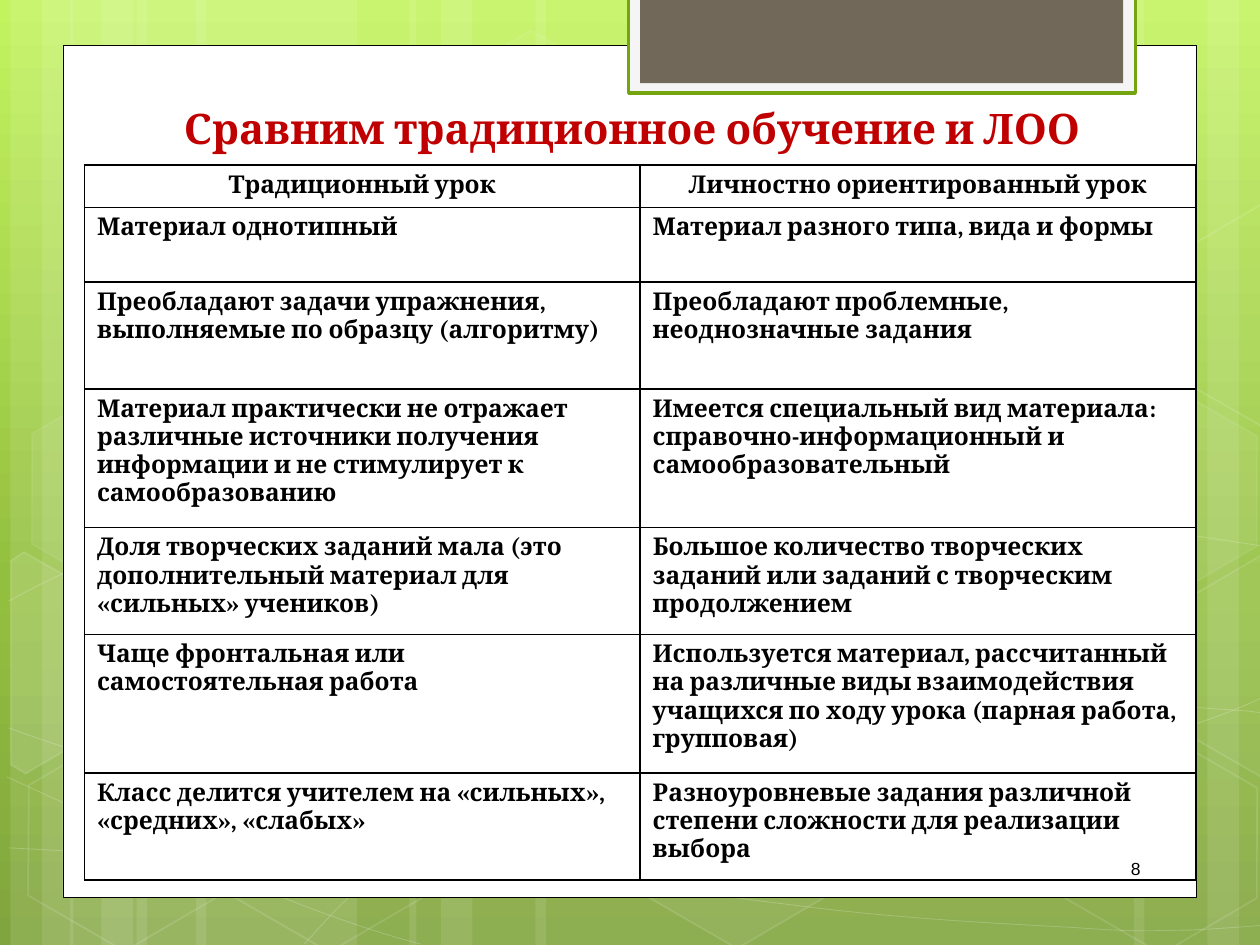
from copy import deepcopy
from dataclasses import dataclass
from math import cos, radians, sin

from lxml import etree
from pptx import Presentation
from pptx.dml.color import RGBColor
from pptx.enum.shapes import MSO_SHAPE
from pptx.enum.text import MSO_ANCHOR, MSO_AUTO_SIZE, PP_ALIGN
from pptx.oxml.ns import qn
from pptx.util import Pt

LEFT, CENTER, RIGHT = PP_ALIGN.LEFT, PP_ALIGN.CENTER, PP_ALIGN.RIGHT
BOTTOM, NO_FIT = MSO_ANCHOR.BOTTOM, MSO_AUTO_SIZE.NONE
RECTANGLE, HEXAGON = MSO_SHAPE.RECTANGLE, MSO_SHAPE.HEXAGON


@dataclass(frozen=True)
class Theme:
    white: str = "FFFFFF"
    ink: str = "000000"
    heading: str = "C00000"
    tab: str = "F5F5F5"
    tab_line: str = "74A510"
    tab_inside: str = "71685A"
    backdrop: tuple = ((0, "C3F35F"), (0.62, "93BF3F"), (1, "81A53E"))
    serif: str = "Cambria"
    sans: str = "Arial"
    heading_size: float = 24
    table_size: float = 14
    number_size: float = 10


def write(frame, text, *, font, size, color, bold=False, align=LEFT):
    paragraph = frame.paragraphs[0]
    paragraph.alignment = align
    run = paragraph.add_run()
    run.text = text
    run.font.name = font
    run.font.size = Pt(size)
    run.font.bold = bold
    run.font.color.rgb = RGBColor.from_string(color)


def paint(fill, color):
    if color is None:
        fill.background()
        return
    fill.solid()
    fill.fore_color.rgb = RGBColor.from_string(color)


def fade(shape, percent, part):
    for color in shape.element.spPr.findall(f"{part}{qn('a:solidFill')}/{qn('a:srgbClr')}"):
        etree.SubElement(color, qn("a:alpha"), val=str(percent * 1000))


def bend(shape):
    segments = shape.element.findall(f".//{qn('a:lnTo')}")
    for i in range(0, len(segments), 3):
        first, *others = segments[i:i + 3]
        curve = etree.Element(qn("a:cubicBezTo"))
        first.addprevious(curve)
        curve.extend([segment[0] for segment in (first, *others)])
        for segment in (first, *others):
            segment.getparent().remove(segment)


def turn(points, center, degrees):
    angle = radians(degrees)
    cx, cy = center
    return [(cx + (x - cx) * cos(angle) - (y - cy) * sin(angle),
             cy + (x - cx) * sin(angle) + (y - cy) * cos(angle)) for x, y in points]


class SlideBuilder:
    """Draws styled elements on the current slide, with lengths in points."""

    def __init__(self, slide, theme):
        self.slide, self.theme = slide, theme

    def background(self):
        fill = self.slide.background.fill
        fill.gradient()
        fill.gradient_angle = 270
        stops = self.slide.element.find(f".//{qn('a:gsLst')}")
        stops.append(deepcopy(stops[-1]))
        for stop, (position, color) in zip(fill.gradient_stops, self.theme.backdrop):
            stop.position = position
            stop.color.rgb = RGBColor.from_string(color)

    def finish(self, shape, fill, line, width, fill_alpha, line_alpha):
        shape.shadow.inherit = False
        paint(shape.fill, fill)
        paint(shape.line.fill, line)
        if line:
            shape.line.width = Pt(width)
        if fill_alpha:
            fade(shape, fill_alpha, "")
        if line_alpha:
            fade(shape, line_alpha, qn("a:ln") + "/")
        return shape

    def preset(self, kind, box, fill=None, line=None, width=1, fill_alpha=None, line_alpha=None):
        shape = self.slide.shapes.add_shape(kind, *map(Pt, box))
        return self.finish(shape, fill, line, width, fill_alpha, line_alpha)

    def outline(self, points, closed=False, fill=None, width=0.5, fill_alpha=None, line_alpha=20):
        (x, y), *rest = [(Pt(x), Pt(y)) for x, y in points]
        builder = self.slide.shapes.build_freeform(x, y)
        builder.add_line_segments(rest, close=closed)
        return self.finish(builder.convert_to_shape(), fill, self.theme.white, width,
                           fill_alpha, line_alpha)

    def wave(self, points):
        bend(self.outline(points))

    def hexagon(self, left, top, fill_alpha, line_alpha):
        white = self.theme.white
        shape = self.preset(HEXAGON, (left, top, 126, 109.5), white if fill_alpha else None,
                            white, 1, fill_alpha, line_alpha)
        shape.adjustments[0] = 0.285
        shape.rotation = 30

    def cut_hexagon(self, points, center, fill_alpha):
        fill = self.theme.white if fill_alpha else None
        shape = self.outline(turn(points, center, -30), True, fill, 1, fill_alpha, 12)
        shape.rotation = 30

    def title(self, text, box):
        title = self.slide.shapes.title
        title.element.getparent().append(title.element)
        title.left, title.top, title.width, title.height = map(Pt, box)
        frame = title.text_frame
        frame.word_wrap, frame.auto_size, frame.vertical_anchor = True, NO_FIT, BOTTOM
        write(frame, text, font=self.theme.serif, size=self.theme.heading_size,
              color=self.theme.heading, bold=True, align=CENTER)

    def page_number(self, text, box):
        frame = self.slide.shapes.add_textbox(*map(Pt, box)).text_frame
        frame.word_wrap = True
        write(frame, text, font=self.theme.sans, size=self.theme.number_size,
              color=self.theme.ink, align=RIGHT)

    def cell_borders(self, cell):
        properties = cell._tc.get_or_add_tcPr()
        for side in ("a:lnL", "a:lnR", "a:lnT", "a:lnB"):
            line = etree.SubElement(properties, qn(side), w=str(Pt(1)))
            solid = etree.SubElement(line, qn("a:solidFill"))
            etree.SubElement(solid, qn("a:srgbClr"), val=self.theme.ink)

    def table(self, rows, left, top, width, heights):
        table = self.slide.shapes.add_table(len(rows), len(rows[0]), Pt(left), Pt(top),
                                            Pt(width), Pt(sum(heights))).table
        table.first_row = table.horz_banding = False
        for r, (texts, height) in enumerate(zip(rows, heights)):
            table.rows[r].height = Pt(height)
            for c, text in enumerate(texts):
                cell = table.cell(r, c)
                self.cell_borders(cell)
                cell.fill.background()
                write(cell.text_frame, text, font=self.theme.serif, size=self.theme.table_size,
                      color=self.theme.ink, bold=True, align=LEFT if r else CENTER)


BAND_GROUPS = [(6, 126, False), (40, 126, False), (6, 126, True), (234, 222, False)]
WAVES = [
    [(5, 484.5), (44, 486.5), (83, 489), (137, 488), (191, 487.5), (258, 486), (330, 479),
     (402, 471.5), (504, 458), (570, 444), (636, 430.5), (703.5, 409), (725, 396.5)],
    [(5, 343.5), (26, 332), (47, 321), (87, 310.5), (128, 299.5), (186.5, 283.5), (250, 278.5),
     (314, 273.5), (391.5, 273), (471, 278.5), (550, 284.5), (682, 306.5), (725, 312.5)],
    [(4, 444), (91.5, 484), (178, 523.5), (240.5, 539.5)],
    [(5, 416), (27.5, 424), (50.5, 432), (92, 443.5), (134, 454.5), (196.5, 472.5), (257, 484.5),
     (317, 497), (392.5, 510), (452, 517), (512, 525), (576, 528), (614, 530),
     (651.5, 533), (661.5, 531.5), (680.5, 531.5), (699, 530.5), (712, 529.5), (725, 528.5)],
    [(174, 539.5), (187, 525), (200, 510.5), (217.5, 497.5), (234.5, 484.5), (259, 470),
     (279.5, 460), (299.5, 450), (312, 445.5), (338.5, 438.5), (364.5, 431.5), (412.5, 421),
     (438, 416), (463.5, 411), (467.5, 411), (489.5, 409.5), (512, 407.5), (547, 405.5),
     (571.5, 404.5), (597, 404), (638, 404.5), (638, 404.5), (654, 404.5), (670, 404.5),
     (686, 404.5), (699, 405.5), (711.5, 406), (718, 407), (724, 407.5), (722, 407), (724.5, 407.5)],
]
HEXAGONS = [(240.5, 26, 4, 8), (358, 424, 6, 12), (8, 425.5, None, 12), (10, 224.5, 7, 8),
            (125, 426, None, 12), (542, 326, 10, 12), (600.5, 427, None, 12), (600.5, 226, 7, 8)]
LEFT_CUT = [(6, 320.5), (13.5, 315.5), (69, 347), (68.5, 410.5), (14.5, 442), (6, 437)]
RIGHT_CUT = [(666.5, 349), (720.5, 317.5), (726.5, 321), (726.5, 441.5), (721.5, 444), (666.5, 412.5)]
COMPARISON = [
    ("Традиционный урок", "Личностно ориентированный урок"),
    ("Материал однотипный", "Материал разного типа, вида и формы"),
    ("Преобладают задачи упражнения, выполняемые по образцу (алгоритму)",
     "Преобладают проблемные, неоднозначные задания"),
    ("Материал практически не отражает различные источники получения информации и не стимулирует к самообразованию",
     "Имеется специальный вид материала: справочно-информационный и самообразовательный"),
    ("Доля творческих заданий мала (это дополнительный материал для «сильных» учеников)",
     "Большое количество творческих заданий или заданий с творческим продолжением"),
    ("Чаще фронтальная или самостоятельная работа",
     "Используется материал, рассчитанный на различные виды взаимодействия учащихся по ходу урока (парная работа, групповая)"),
    ("Класс делится учителем на «сильных», «средних», «слабых»",
     "Разноуровневые задания различной степени сложности для реализации выбора"),
]


def main():
    deck = Presentation()
    deck.slide_width, deck.slide_height = Pt(720), Pt(540)
    theme = Theme()
    page = SlideBuilder(deck.slides.add_slide(deck.slide_layouts[5]), theme)
    page.background()
    for start, wide, mirrored in BAND_GROUPS:
        for offset, width in ((72, wide), (0, 36), (18, 60)):
            left = 732 - start - offset - width if mirrored else start + offset
            page.preset(RECTANGLE, (left, 0, width, 540), theme.white, fill_alpha=10)
    for points in WAVES:
        page.wave(points)
    for hexagon in HEXAGONS:
        page.hexagon(*hexagon)
    page.cut_hexagon(LEFT_CUT, (26, 385), 10)
    for rise, alpha in ((0, 4), (200.5, None)):
        page.cut_hexagon([(x, y - rise) for x, y in RIGHT_CUT], (709, 374.5 - rise), alpha)
    page.preset(RECTANGLE, (36, 26, 648, 487), theme.white, theme.ink, 0.5)
    page.preset(RECTANGLE, (359.25, -1.5, 289.5, 54.75), theme.tab, theme.tab_line, 2)
    page.preset(RECTANGLE, (365.75, -1.5, 276, 49), theme.tab_inside)
    page.title(" Сравним традиционное обучение и ЛОО", (82, 54.75, 553, 36))
    page.page_number("8", (521.25, 486.5, 137.5, 31.5))
    page.table(COMPARISON, 48.25, 94.25, 635, (24.4, 42.5, 61.1, 79.2, 61.1, 79.2, 61.1))
    deck.save("out.pptx")


if __name__ == "__main__":
    main()
